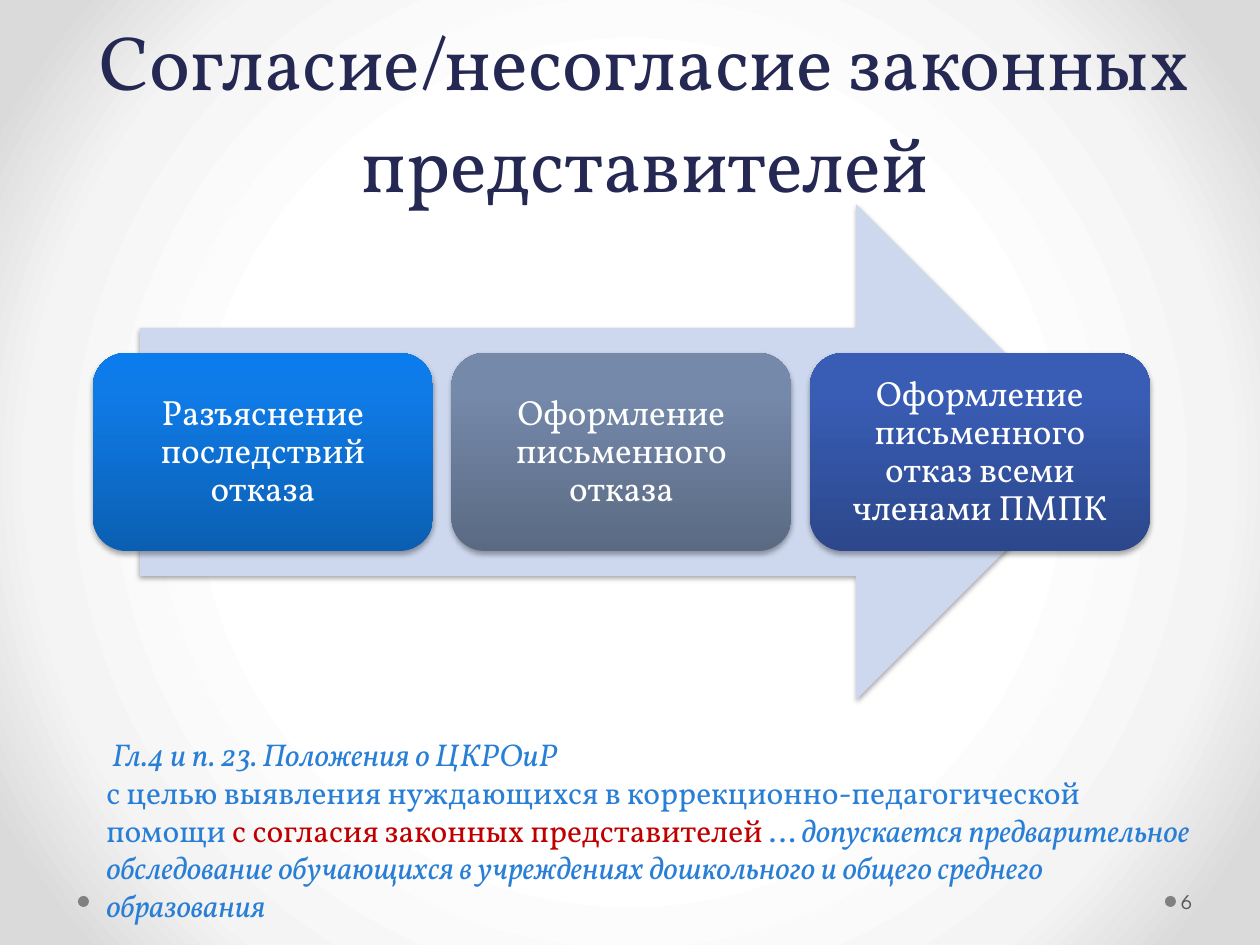
import dataclasses

import pptx
import pptx.dml.color
import pptx.enum.shapes
import pptx.enum.text
import pptx.oxml
import pptx.oxml.ns
import pptx.util

EMU_PER_PX = 914400 / 126
SHAPES = pptx.enum.shapes.MSO_SHAPE
ALIGN = pptx.enum.text.PP_ALIGN
ANCHOR = pptx.enum.text.MSO_ANCHOR


@dataclasses.dataclass(frozen=True)
class Theme:
    """Colours, fonts and type sizes of the slide."""

    serif: str = "Vollkorn"
    sans: str = "League Spartan"
    title: str = "242852"
    arrow: str = "CDD8EF"
    on_card: str = "FFFFFF"
    accent: str = "297FD5"
    warning: str = "C00000"
    dot: str = "808080"
    number: str = "595959"
    title_size: int = 44
    card_size: int = 20
    note_size: int = 18
    number_size: int = 12
    backdrop: tuple = ((50, "FFFFFF"), (76, "F4F4F4"), (92, "DADADA"))
    cards: tuple = (
        ((0, "0B5FB2"), (80, "0F7BE7"), (100, "0B7CED")),
        ((0, "5A6A83"), (80, "7589AA"), (100, "748AAC")),
        ((0, "2C478B"), (80, "395DB5"), (100, "375CB8")),
    )


THEME = Theme()
STEPS = (
    "Разъяснение последствий отказа",
    "Оформление письменного отказа",
    "Оформление письменного отказ всеми членами ПМПК",
)


def px(length):
    """Turn px into EMU."""
    return pptx.util.Emu(round(length * EMU_PER_PX))


def rgb(colour):
    """Turn a hex string into a colour."""
    return pptx.dml.color.RGBColor.from_string(colour)


def parse_drawing(tag, body):
    """Build a DrawingML element from its tag and inner XML."""
    return pptx.oxml.parse_xml(f"<a:{tag} {pptx.oxml.ns.nsdecls('a')}>{body}</a:{tag}>")


def set_gradient(fill, owner, stops, direction):
    """Give the owner of a fill a gradient with these stops and direction XML."""
    fill.gradient()
    gradient = owner.find(".//" + pptx.oxml.ns.qn("a:gradFill"))
    for child in list(gradient):
        gradient.remove(child)
    marks = "".join(
        f'<a:gs pos="{at * 1000}"><a:srgbClr val="{colour}"/></a:gs>' for at, colour in stops
    )
    gradient.extend(parse_drawing("gradFill", f"<a:gsLst>{marks}</a:gsLst>{direction}"))


def add_shadow(shape):
    """Add a soft shadow below a shape."""
    shape._element.spPr.append(parse_drawing(
        "effectLst",
        '<a:outerShdw blurRad="39370" dist="22860" dir="5400000" rotWithShape="0">'
        '<a:srgbClr val="000000"><a:alpha val="35000"/></a:srgbClr></a:outerShdw>',
    ))


def add_solid(slide, preset, box, colour):
    """Add a plain filled shape without a line."""
    shape = slide.shapes.add_shape(preset, *map(px, box))
    shape.shadow.inherit = False
    shape.fill.solid()
    shape.fill.fore_color.rgb = rgb(colour)
    shape.line.fill.background()
    return shape


def add_text_box(slide, box, anchor):
    """Add a wrapping text box and return its frame."""
    frame = slide.shapes.add_textbox(*map(px, box)).text_frame
    frame.word_wrap = True
    frame.vertical_anchor = anchor
    return frame


def style(font, name, size, colour):
    """Set typeface, size and colour of a font."""
    font.name = name
    font.size = pptx.util.Pt(size)
    font.color.rgb = rgb(colour)


def add_backdrop(slide):
    """Fill the background with a radial gradient."""
    set_gradient(
        slide.background.fill, slide._element, THEME.backdrop,
        '<a:path path="circle"><a:fillToRect l="50000" t="50000" r="50000" b="50000"/></a:path>',
    )


def add_title(slide, box):
    """Place the heading at the bottom of its box."""
    heading = add_text_box(slide, box, ANCHOR.BOTTOM).paragraphs[0]
    heading.text = "Согласие/несогласие законных представителей"
    heading.alignment = ALIGN.CENTER
    heading.line_spacing = pptx.util.Pt(58)
    style(heading.font, THEME.serif, THEME.title_size, THEME.title)


def add_card(slide, box, step, stops):
    """Place one step of the process on a rounded card."""
    card = add_solid(slide, SHAPES.ROUNDED_RECTANGLE, box, stops[0][1])
    set_gradient(card.fill, card._element.spPr, stops, '<a:lin ang="16200000" scaled="0"/>')
    card._element.spPr.remove(card._element.spPr.find(pptx.oxml.ns.qn("a:effectLst")))
    add_shadow(card)
    frame = card.text_frame
    frame.word_wrap = True
    frame.vertical_anchor = ANCHOR.MIDDLE
    frame.margin_left = frame.margin_right = frame.margin_top = frame.margin_bottom = px(10)
    label = frame.paragraphs[0]
    label.text = step
    label.alignment = ALIGN.CENTER
    label.line_spacing = 0.9
    label.space_after = pptx.util.Pt(7)
    style(label.font, THEME.serif, THEME.card_size, THEME.on_card)


def add_process(slide, box):
    """Place the arrow and the row of step cards over it."""
    left, top, width, height = box
    arrow_left = 47
    arrow = add_solid(
        slide, SHAPES.RIGHT_ARROW, (left + arrow_left, top, 964, height), THEME.arrow
    )
    arrow._element.spPr.remove(arrow._element.spPr.find(pptx.oxml.ns.qn("a:effectLst")))
    add_shadow(arrow)
    card_width, card_height = 340, 198
    pitch = (width - card_width) / (len(STEPS) - 1)
    card_top = top + (height - card_height) / 2
    for index, (step, stops) in enumerate(zip(STEPS, THEME.cards)):
        add_card(slide, (left + index * pitch, card_top, card_width, card_height), step, stops)


def add_note(slide, box):
    """Place the reference and the quoted rule."""
    frame = add_text_box(slide, box, ANCHOR.TOP)
    frame.margin_top = px(84)
    reference, rule = frame.paragraphs[0], frame.add_paragraph()
    reference.text = " Гл.4 и п. 23. Положения о ЦКРОиР"
    reference.font.italic = True
    for paragraph in (reference, rule):
        style(paragraph.font, THEME.serif, THEME.note_size, THEME.accent)
    for words, colour, italic in (
        ("с целью выявления нуждающихся в коррекционно-педагогической помощи ", THEME.accent, False),
        ("с согласия законных представителей ", THEME.warning, False),
        ("…", THEME.accent, False),
        (" допускается предварительное обследование обучающихся в учреждениях "
         "дошкольного и общего среднего образования", THEME.accent, True),
    ):
        run = rule.add_run()
        run.text = words
        run.font.italic = italic
        run.font.color.rgb = rgb(colour)


def add_footer(slide, box):
    """Place the two dots and the slide number."""
    left, top, width, height = box
    dot = 11
    for offset in (0, 1087):
        add_solid(slide, SHAPES.OVAL, (left + offset, top + 20, dot, dot), THEME.dot)
    frame = add_text_box(slide, (left + width - 77, top, 77, height), ANCHOR.MIDDLE)
    frame.margin_left = px(4)
    frame.margin_right = frame.margin_top = frame.margin_bottom = px(6)
    number = frame.paragraphs[0]
    number.text = "6"
    style(number.font, THEME.sans, THEME.number_size, THEME.number)


def main():
    """Build the slide and save it."""
    deck = pptx.Presentation()
    deck.slide_width, deck.slide_height = px(1260), px(945)
    slide = deck.slides.add_slide(deck.slide_layouts[6])
    add_backdrop(slide)
    add_footer(slide, (78, 876, 1176, 50))
    add_title(slide, (15, 16, 1260, 198))
    add_process(slide, (93, 204, 1057, 496))
    add_note(slide, (94, 651, 1121, 318))
    deck.save("out.pptx")


if __name__ == "__main__":
    main()
